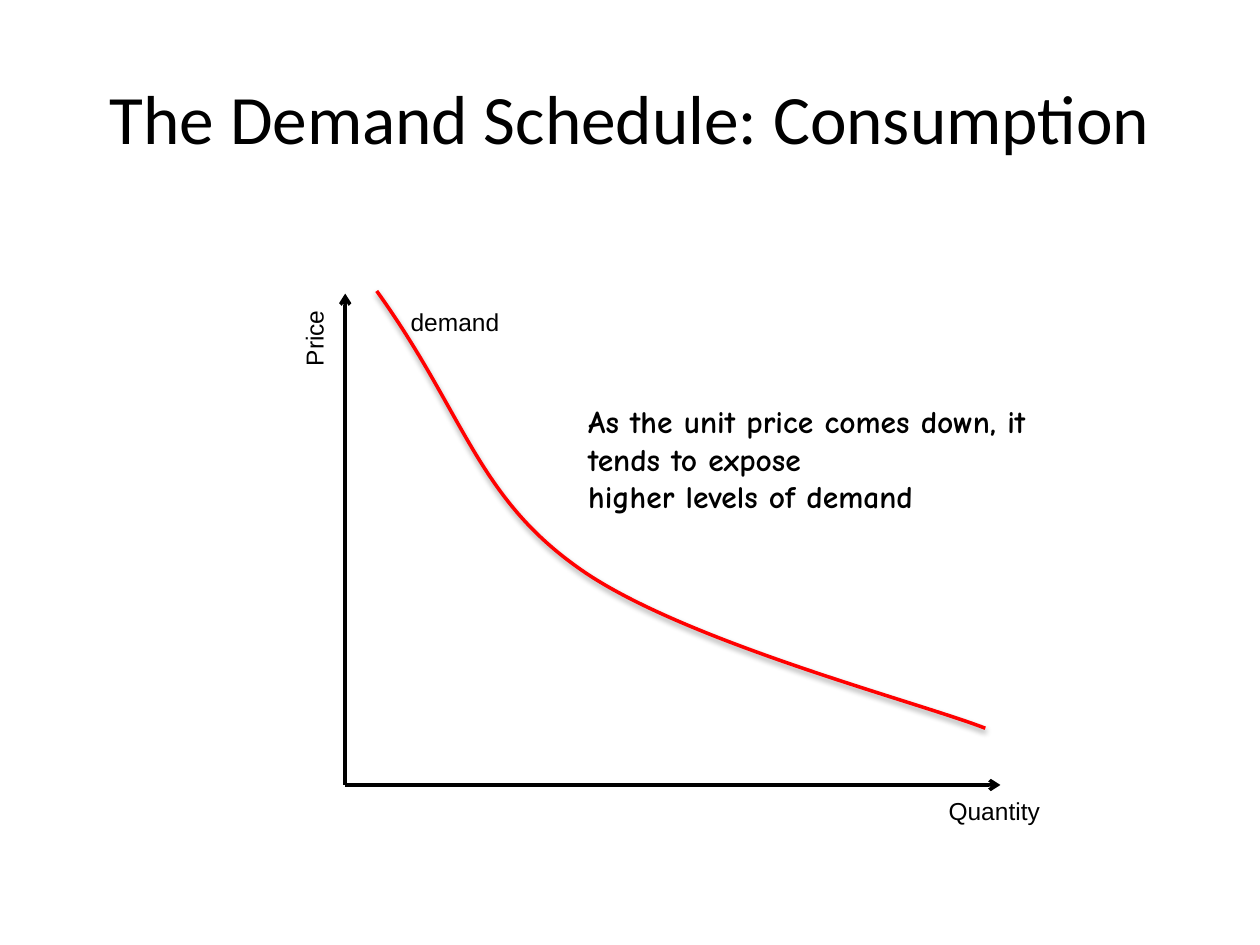
from lxml import etree
from pptx import Presentation
from pptx import util as u
from pptx.dml.color import RGBColor
from pptx.enum import shapes, text
from pptx.oxml import ns

BLACK = "000000"
RED = "FF0000"


def color(value):
    return RGBColor.from_string(value)


def add_node(parent, tag, **attributes):
    return etree.SubElement(parent, ns.qn(tag), attributes)


class SlideBuilder:
    label_font = "Arial"
    label_size = 14
    line_width = u.Pt(2)

    def __init__(self, slide):
        self.slide = slide

    def format_text(self, frame, font, size, bold=False, align=text.PP_ALIGN.LEFT):
        for paragraph in frame.paragraphs:
            paragraph.alignment = align
            for run in paragraph.runs:
                run.font.name = font
                run.font.size = u.Pt(size)
                run.font.bold = bold
                run.font.color.rgb = color(BLACK)

    def title(self, wording, *box):
        shape = self.slide.shapes.title
        shape.left, shape.top, shape.width, shape.height = map(u.Inches, box)
        frame = shape.text_frame
        frame.text = wording
        frame.vertical_anchor = text.MSO_ANCHOR.MIDDLE
        self.format_text(frame, "Calibri", 39.6, align=text.PP_ALIGN.CENTER)

    def textbox(self, wording, box, font=label_font, size=label_size,
                bold=False, wrap=False, rotation=0):
        shape = self.slide.shapes.add_textbox(*map(u.Inches, box))
        shape.rotation = rotation
        frame = shape.text_frame
        frame.word_wrap = wrap
        frame.text = wording
        self.format_text(frame, font, size, bold)

    def style_line(self, line, value):
        line.color.rgb = color(value)
        line.width = self.line_width

    def axis(self, start, end):
        connector = self.slide.shapes.add_connector(
            shapes.MSO_CONNECTOR.STRAIGHT, *map(u.Inches, start + end))
        self.style_line(connector.line, BLACK)
        properties = connector.element.spPr
        add_node(properties.find(ns.qn("a:ln")), "a:tailEnd", type="arrow")
        add_node(properties, "a:effectLst")

    def curve(self, *points):
        start, *others = [(u.Inches(x), u.Inches(y)) for x, y in points]
        builder = self.slide.shapes.build_freeform(*start)
        builder.add_line_segments(others, close=False)
        shape = builder.convert_to_shape()
        shape.fill.background()
        self.style_line(shape.line, RED)
        self.bend_segments(shape)
        self.add_shadow(shape)

    def bend_segments(self, shape):
        path = next(shape.element.iter(ns.qn("a:path")))
        segments = path.findall(ns.qn("a:lnTo"))
        for first in range(0, len(segments), 3):
            bezier = add_node(path, "a:cubicBezTo")
            for segment in segments[first:first + 3]:
                bezier.append(segment[0])
                path.remove(segment)

    def add_shadow(self, shape):
        shape.shadow.inherit = False
        effects = shape.element.spPr.find(ns.qn("a:effectLst"))
        shadow = add_node(effects, "a:outerShdw", blurRad=str(u.Pt(3.1)),
                          dist=str(u.Pt(1.6)), dir="5400000", rotWithShape="0")
        shade = add_node(shadow, "a:srgbClr", val=BLACK)
        add_node(shade, "a:alpha", val="38000")


def main():
    presentation = Presentation()
    presentation.slide_width = u.Inches(10)
    presentation.slide_height = u.Inches(7.5)
    slide = presentation.slides.add_slide(presentation.slide_layouts[5])
    builder = SlideBuilder(slide)

    builder.title("The Demand Schedule: Consumption", 0.5, 0.3, 9, 1.25)
    origin = (2.74, 6.23)
    builder.axis(origin, (7.94, 6.23))
    builder.axis(origin, (2.74, 2.33))
    builder.textbox("Quantity", (7.43, 6.27, 0.94, 0.34))
    builder.textbox("Price", (2.17, 2.51, 0.65, 0.34), rotation=270)
    builder.curve((2.99, 2.31), (3.68, 3.27), (3.78, 3.93), (4.58, 4.5),
                  (5.38, 5.08), (7.28, 5.57), (7.82, 5.78))
    builder.textbox("demand", (3.16, 2.39, 0.91, 0.34))
    builder.textbox("As the unit price comes down, it tends to expose\n"
                    "higher levels of demand", (4.57, 3.14, 4.07, 0.71),
                    font="Comic Neue", size=18, bold=True, wrap=True)

    presentation.save("out.pptx")


if __name__ == "__main__":
    main()
